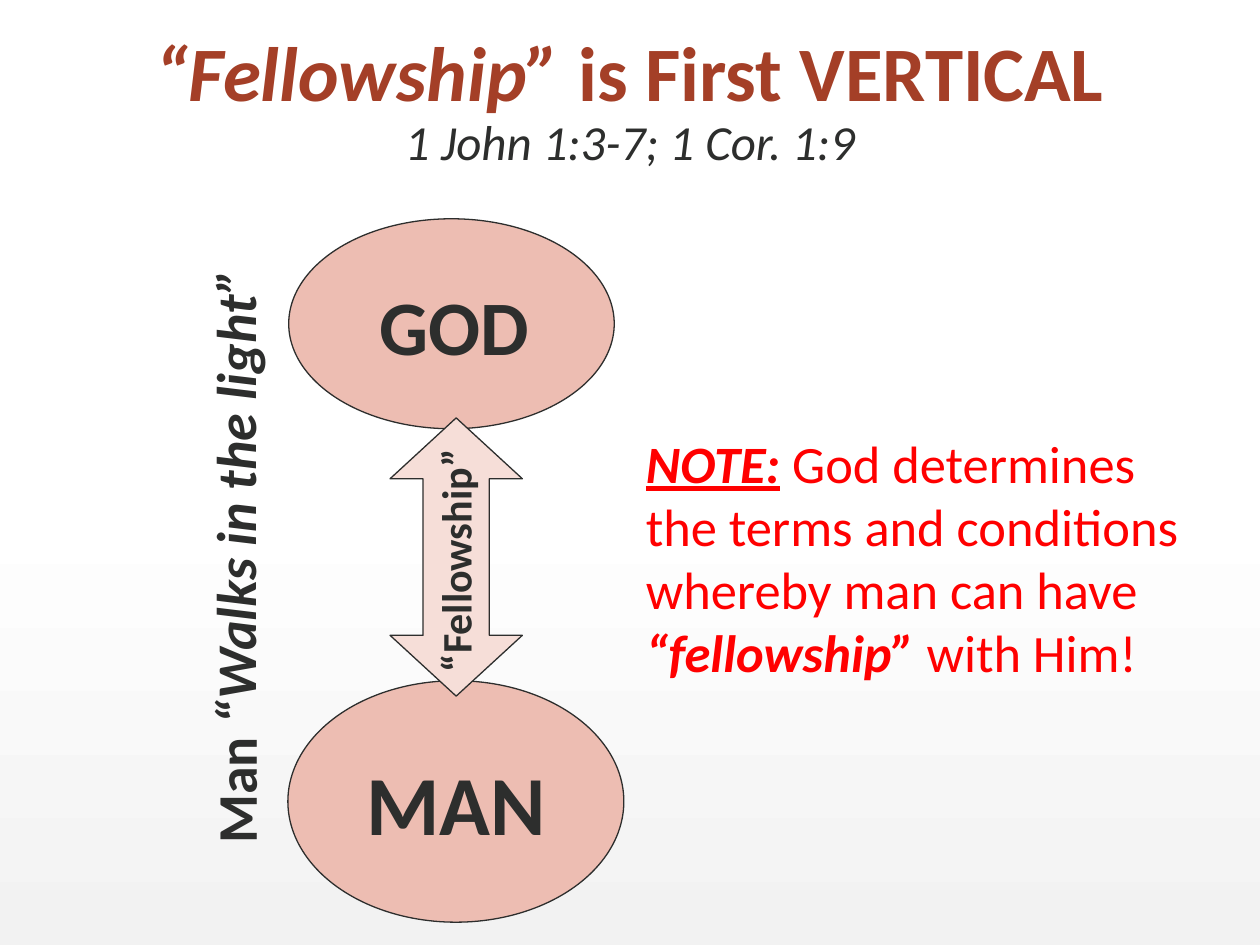
from pptx import Presentation
from pptx.dml.color import RGBColor
from pptx.enum.shapes import MSO_SHAPE
from pptx.enum.text import MSO_ANCHOR, PP_ALIGN
from pptx.util import Pt

FONT = "Calibri"
WHITE = RGBColor(0xFF, 0xFF, 0xFF)
PALE_GRAY = RGBColor(0xF2, 0xF2, 0xF2)
RUST = RGBColor(0xA4, 0x3F, 0x27)
DARK = RGBColor(0x2D, 0x2E, 0x2D)
ROSE = RGBColor(0xED, 0xBD, 0xB2)
PALE_ROSE = RGBColor(0xF6, 0xDE, 0xD8)
RED = RGBColor(0xFF, 0x00, 0x00)


def set_background(s):
    fill = s.background.fill
    fill.gradient()
    fill.gradient_angle = 270
    for stop, position, color in zip(fill.gradient_stops, (0.53, 1), (WHITE, PALE_GRAY)):
        stop.position = position
        stop.color.rgb = color


def add_run(p, text, size, color, style=""):
    r = p.add_run()
    r.text = text
    r.font.name = FONT
    r.font.size = Pt(size)
    r.font.color.rgb = color
    r.font.bold = "b" in style
    r.font.italic = "i" in style
    r.font.underline = "u" in style


def add_text(s, box, runs, size, color=DARK, align=PP_ALIGN.CENTER, rotation=0):
    sp = s.shapes.add_textbox(*map(Pt, box))
    sp.rotation = rotation
    tf = sp.text_frame
    tf.word_wrap = True
    p = tf.paragraphs[0]
    p.alignment = align
    for text, style in runs:
        add_run(p, text, size, color, style)
    return sp


def add_outlined(s, kind, box, fill, rotation=0):
    sp = s.shapes.add_shape(kind, *map(Pt, box))
    sp.rotation = rotation
    sp.shadow.inherit = False
    sp.fill.solid()
    sp.fill.fore_color.rgb = fill
    sp.line.color.rgb = DARK
    sp.line.width = Pt(0.75)
    return sp


def add_title(s):
    runs = [("“Fellowship” ", "bi"), ("is First VERTICAL", "b")]
    sp = add_text(s, (53.5, 8.5, 613, 93), runs, 44, RUST)
    sp.fill.solid()
    sp.fill.fore_color.rgb = WHITE
    tf = sp.text_frame
    tf.vertical_anchor = MSO_ANCHOR.BOTTOM
    p = tf.paragraphs[0]
    p.line_spacing = 0.9
    p.add_line_break()
    add_run(p, "1 John 1:3-7; 1 Cor. 1:9", 28, DARK, "i")


def add_diagram(s):
    add_outlined(s, MSO_SHAPE.OVAL, (165, 125, 186, 120), ROSE)
    add_text(s, (192, 155.5, 135.5, 60.5), [("GOD", "b")], 44)

    man = add_outlined(s, MSO_SHAPE.OVAL, (164.5, 389, 192, 138), ROSE)
    tf = man.text_frame
    tf.word_wrap = False
    tf.vertical_anchor = MSO_ANCHOR.MIDDLE
    p = tf.paragraphs[0]
    p.alignment = PP_ALIGN.CENTER
    add_run(p, "MAN", 48, DARK, "b")

    arrow = add_outlined(s, MSO_SHAPE.LEFT_RIGHT_ARROW, (181.2, 280.5, 159, 75.6), PALE_ROSE, 270)
    arrow.adjustments[0] = 0.5
    arrow.adjustments[1] = 0.46
    add_text(s, (179.5, 302.5, 161, 36), [("“Fellowship”", "b")], 24, rotation=270)
    add_text(s, (-47.5, 295, 363.5, 46), [("Man", "b"), (" “Walks in the light”", "bi")], 32, rotation=270)


def add_note(s):
    runs = [
        ("NOTE:", "biu"),
        (" God determines the terms and conditions whereby man can have ", ""),
        ("“fellowship” ", "bi"),
        ("with Him!", ""),
    ]
    add_text(s, (362, 242.5, 340, 152.5), runs, 30, RED, PP_ALIGN.LEFT)


def main():
    """Build the slide on fellowship between God and man."""
    prs = Presentation()
    prs.slide_width, prs.slide_height = Pt(720), Pt(540)
    s = prs.slides.add_slide(prs.slide_layouts[6])
    set_background(s)
    add_title(s)
    add_diagram(s)
    add_note(s)
    prs.save("out.pptx")


if __name__ == "__main__":
    main()
